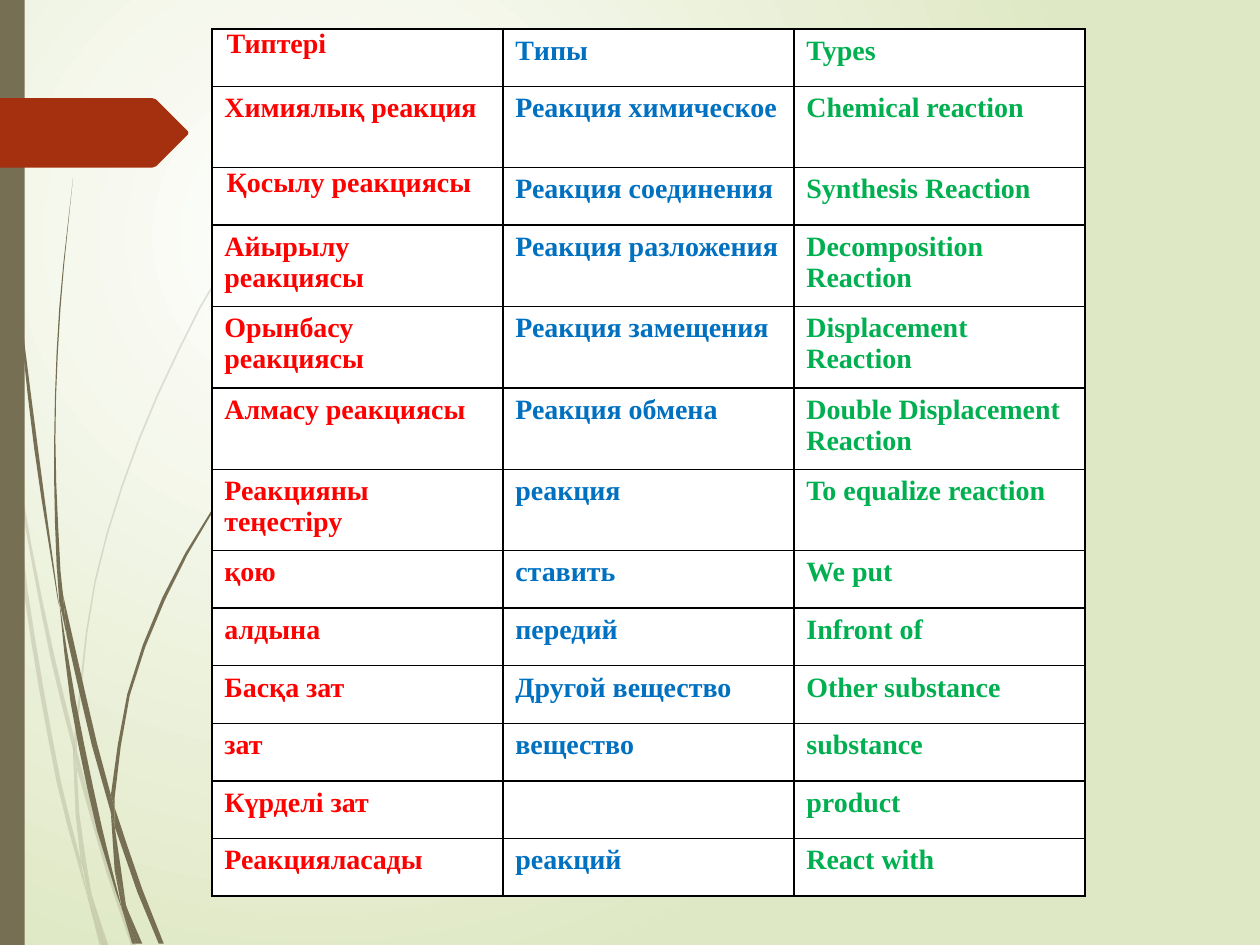
from math import dist

from lxml import etree
from pptx import Presentation
from pptx.dml.color import RGBColor as Rgb
from pptx.enum.shapes import MSO_SHAPE as Shape
from pptx.oxml.ns import qn
from pptx.util import Cm, Pt

WHITE = Rgb(0xFF, 0xFF, 0xFF)
LIME = Rgb(0xDF, 0xE8, 0xC4)
OLIVE = Rgb(0x76, 0x6F, 0x54)
RUST = Rgb(0xA5, 0x30, 0x10)
RED = Rgb(0xFF, 0x00, 0x00)
BLUE = Rgb(0x00, 0x70, 0xC0)
GREEN = Rgb(0x00, 0xB0, 0x50)
BLACK = Rgb(0x00, 0x00, 0x00)
FONT = "Times New Roman"
GRID = Cm(0.0254)

PALE = [
    ([(8, 350), (6, 322), (0, 282)], [(0, 299), (7, 344)]),
    ([(10, 345), (25, 433), (43, 520), (59, 586)], [(59, 599), (40, 522), (12, 376)]),
    ([(61, 596), (64, 607), (88, 692), (108, 750)], [(104, 750), (85, 694), (61, 610)]),
    ([(73, 711), (86, 750)], [(83, 750)]),
    ([(8, 350), (12, 376), (22, 469), (48, 619), (64, 683), (70, 714)],
     [(64, 693), (45, 621), (19, 470), (8, 350)]),
    ([(58, 599), (60, 646), (64, 683), (73, 711)], [(72, 706), (63, 646), (61, 610)]),
    ([(61, 596), (61, 584), (76, 462), (111, 349), (159, 245), (187, 198), (217, 154)],
     [(217, 153), (186, 197), (158, 244), (110, 348), (75, 461), (59, 584)]),
    ([(70, 714), (79, 750)], [(82, 750)]),
    ([(61, 608), (61, 596), (59, 586)], [(58, 599)]),
    ([(65, 683), (70, 714), (82, 750)], [(83, 750), (73, 711), (67, 692)]),
]
DARK = [
    ([(3, 0), (6, 109), (15, 232), (30, 355), (47, 481)],
     [(46, 477), (27, 355), (14, 233), (5, 110), (2, 0)]),
    ([(50, 472), (77, 590), (88, 631)], [(88, 645), (73, 592), (53, 505)]),
    ([(91, 641), (113, 706), (130, 749)], [(126, 749), (109, 708), (91, 656)]),
    ([(47, 477), (60, 556), (81, 657), (97, 722)],
     [(92, 708), (77, 659), (56, 557), (47, 477)]),
    ([(50, 472), (48, 453), (44, 349), (48, 245), (58, 141)],
     [(58, 141), (47, 245), (43, 349), (45, 449), (49, 472)]),
    ([(100, 719), (113, 749)], [(110, 749)]),
    ([(45, 449), (50, 472), (53, 505)], [(47, 477)]),
    ([(91, 641), (91, 633), (103, 552), (131, 476), (169, 406), (216, 344)],
     [(215, 344), (168, 405), (129, 474), (101, 551), (88, 631)]),
    ([(97, 722), (108, 749)], [(105, 749)]),
    ([(88, 645), (91, 656), (100, 719)], [(96, 706), (91, 691)]),
    ([(88, 631), (91, 641), (91, 656)], [(88, 645)]),
    ([(91, 691), (96, 706), (110, 749)], [(108, 749), (97, 722)]),
]
FLAG = [(0, 0), (121, 0), (124, 1), (149, 26), (149.5, 27.5), (149, 29), (124, 54), (121, 55), (0, 55)]

ROWS = [
    ("Типтері", "Tипы", "Types"),
    ("Химиялық реакция", "Реакция химическое", "Chemical reaction"),
    ("Қосылу реакциясы", "Реакция соединения", "Synthesis Reaction"),
    ("Айырылу реакциясы", "Реакция разложения", "Decomposition Reaction"),
    ("Орынбасу реакциясы", "Реакция замещения", "Displacement Reaction"),
    ("Алмасу реакциясы", "Реакция обмена", "Double Displacement Reaction"),
    ("Реакцияны теңестіру", "реакция", "To equalize reaction"),
    ("қою", "ставить", "We put"),
    ("алдына", "передий", "Infront of"),
    ("Басқа зат", "Другой вещество", "Other substance"),
    ("зат", "вещество", "substance"),
    ("Күрделі зат", "", "product"),
    ("Реакциялаcады", "реакций", "React with"),
]
TALL = {1, 3, 4, 5, 6}
FLUSH = {0, 2}


def bend(edge):
    def slope(i):
        a, b, c = edge[max(i - 1, 0)], edge[i], edge[min(i + 1, len(edge) - 1)]
        span = dist(a, b) + dist(b, c)
        return [(q - p) / span for p, q in zip(a, c)]

    out = [edge[0]]
    for i, (a, b) in enumerate(zip(edge, edge[1:])):
        gap, u, v = dist(a, b), slope(i), slope(i + 1)
        steps = max(1, round(gap / 40))
        for k in range(1, steps + 1):
            t = k / steps
            s = t * t * (3 - 2 * t)
            out.append(tuple(
                p + (q - p) * s + gap * (m * t * (1 - t) ** 2 - n * t * t * (1 - t))
                for p, q, m, n in zip(a, b, u, v)))
    return out


def paint(shape, color, alpha=None):
    shape.shadow.inherit = False
    shape.fill.solid()
    shape.fill.fore_color.rgb = color
    shape.line.fill.background()
    if alpha:
        tone = shape._element.spPr.find(qn("a:solidFill"))[0]
        etree.SubElement(tone, qn("a:alpha"), val=str(alpha * 1000))


def outline(shapes, points, left, top, color, alpha=None):
    spots = [(left + x * GRID, top + y * GRID) for x, y in points]
    form = shapes.build_freeform(*spots[0], scale=1.0)
    form.add_line_segments(spots[1:], close=True)
    paint(form.convert_to_shape(), color, alpha)


def grass(slide, blades, left, top, alpha=None):
    group = slide.shapes.add_group_shape()
    for edge, back in blades:
        outline(group.shapes, bend(edge) + bend(back), left, top, OLIVE, alpha)


def backdrop(slide):
    fill = slide.background.fill
    fill.gradient()
    for stop, color in zip(fill.gradient_stops, (WHITE, LIME)):
        stop.color.rgb = color
    grad = slide.element.find(".//" + qn("a:gradFill"))
    grad.remove(grad.find(qn("a:lin")))
    ring = etree.SubElement(grad, qn("a:path"), path="circle")
    etree.SubElement(ring, qn("a:fillToRect"), l="50000", t="50000", r="100000", b="100000")


def side(slide, left, top, width, height):
    grass(slide, PALE, left, top, alpha=20)
    grass(slide, DARK, left, top)
    paint(slide.shapes.add_shape(Shape.RECTANGLE, left, top, width, height), OLIVE)
    outline(slide.shapes, FLAG, left, top + Cm(1.98), RUST)


def write(frame, text, size=16, color=BLACK, bold=True):
    run = frame.paragraphs[0].add_run()
    run.text = text
    font = run.font
    font.name, font.size, font.bold = FONT, Pt(size), bold
    font.color.rgb = color


def border(cell, color, width):
    props = cell._tc.get_or_add_tcPr()
    for name in ("a:lnL", "a:lnR", "a:lnT", "a:lnB"):
        line = etree.SubElement(props, qn(name), w=str(Pt(width)))
        fill = etree.SubElement(line, qn("a:solidFill"))
        etree.SubElement(fill, qn("a:srgbClr"), val=str(color))


def terms(slide, left, top, width, height):
    table = slide.shapes.add_table(len(ROWS), 3, left, top, width, height).table
    table.first_row = table.horz_banding = False
    for col in table.columns:
        col.width = width // 3
    for i, words in enumerate(ROWS):
        table.rows[i].height = Cm(1.64 if i in TALL else 1.16)
        for j, (text, color) in enumerate(zip(words, (RED, BLUE, GREEN))):
            cell = table.cell(i, j)
            border(cell, BLACK, 1)
            cell.fill.solid()
            cell.fill.fore_color.rgb = WHITE
            if j == 0 and i in FLUSH:
                cell.margin_left = cell.margin_right = Cm(0.3)
                cell.margin_top = cell.margin_bottom = 0
            if text:
                write(cell.text_frame, text, color=color)


def main():
    deck = Presentation()
    deck.slide_width, deck.slide_height = Cm(25.4), Cm(19.05)
    slide = deck.slides.add_slide(deck.slide_layouts[6])
    backdrop(slide)
    side(slide, 0, 0, Cm(0.5), deck.slide_height)
    terms(slide, Cm(4.27), Cm(0.58), Cm(17.6), Cm(17.5))
    deck.save("out.pptx")


if __name__ == "__main__":
    main()
